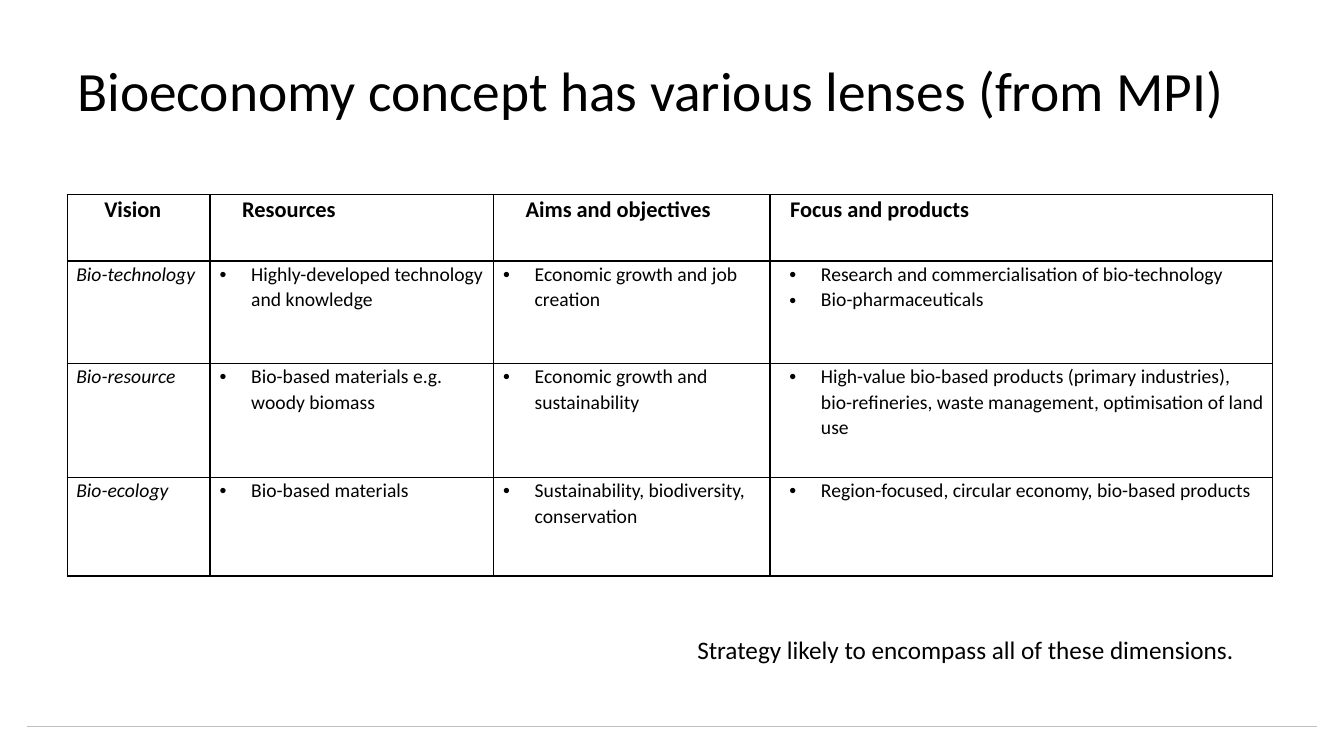
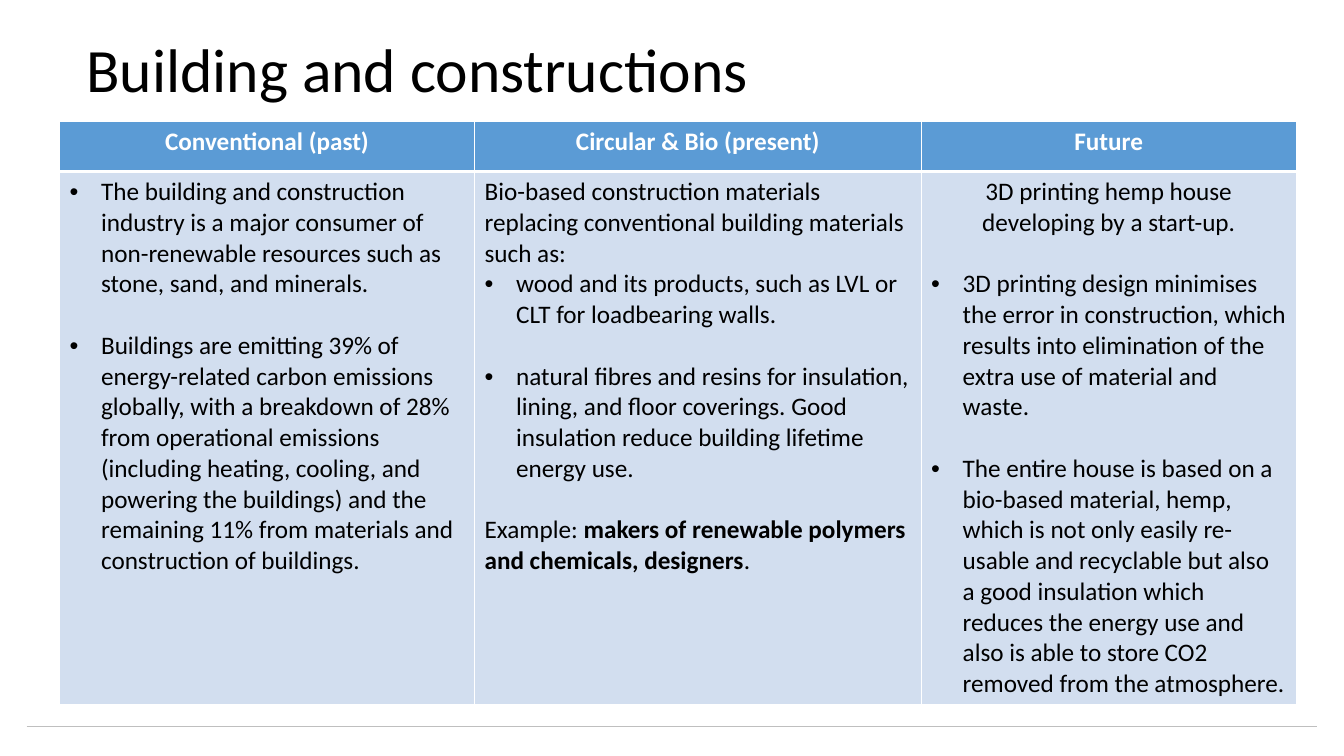
from lxml import etree
from pptx import Presentation
from pptx.dml.color import RGBColor
from pptx.enum.shapes import MSO_CONNECTOR
from pptx.enum.text import MSO_ANCHOR, PP_ALIGN
from pptx.oxml.ns import qn
from pptx.util import Pt

LEFT, CENTER = PP_ALIGN.LEFT, PP_ALIGN.CENTER
MIDDLE, TOP = MSO_ANCHOR.MIDDLE, MSO_ANCHOR.TOP
STRAIGHT = MSO_CONNECTOR.STRAIGHT

COLORS = {
    "text": "000000",
    "white": "FFFFFF",
    "footer_rule": "BFBFBF",
    "header": "5B9BD5",
    "body": "D2DEEF",
}
FONT = "Calibri"
HANG = 22.5
BLANK_LINE = Pt(22)

lens_text = {"size": 14, "spacing": 1.07}
lens_header = {"size": 16, "bold": True, "spacing": 1.07}
STYLES = {
    "title_long": {"size": 39.6, "spacing": 0.9},
    "title": {"size": 44, "spacing": 0.9},
    "plain": {},
    "plain_gap": {"before": BLANK_LINE},
    "centered": {"align": CENTER},
    "bullet": {"margin": HANG, "bullet": True},
    "bullet_gap": {"margin": HANG, "bullet": True, "before": BLANK_LINE},
    "era_header": {"align": CENTER, "bold": True, "color": "white"},
    "vision_header": {**lens_header, "margin": 21.5},
    "lens_header": {**lens_header, "margin": 18},
    "focus_header": {**lens_header, "margin": 9.5},
    "vision": {**lens_text, "margin": 1.5, "italic": True},
    "lens_bullet": {**lens_text, "margin": 24.5, "bullet": True},
    "focus_bullet": {**lens_text, "margin": 31.5, "bullet": True},
}


def write(frame, items):
    for number, (style_name, text) in enumerate(items):
        style = STYLES[style_name]
        paragraph = frame.add_paragraph() if number else frame.paragraphs[0]
        paragraph.alignment = style.get("align", LEFT)
        paragraph.line_spacing = style.get("spacing", 1.0)
        paragraph.space_before = style.get("before", Pt(0))
        properties = paragraph._p.get_or_add_pPr()
        properties.set("marL", str(Pt(style.get("margin", 0))))
        properties.set("indent", str(Pt(-HANG if "bullet" in style else 0)))
        if "bullet" in style:
            etree.SubElement(properties, qn("a:buFont"), typeface="Arial")
            etree.SubElement(properties, qn("a:buChar"), char="•")
        for part, words in enumerate(text.split("*")):
            run = paragraph.add_run()
            run.text = words
            font_values = {
                "name": FONT,
                "size": Pt(style.get("size", 18)),
                "bold": style.get("bold", part % 2 == 1),
                "italic": style.get("italic", False),
            }
            for key, value in font_values.items():
                setattr(run.font, key, value)
            run.font.color.rgb = RGBColor.from_string(COLORS[style.get("color", "text")])


def add_grid(slide, left, top, widths, heights, rows, insets, fills, color, header_rule):
    table = slide.shapes.add_table(
        len(heights), len(widths), Pt(left), Pt(top), Pt(sum(widths)), Pt(sum(heights))
    ).table
    table.first_row = table.horz_banding = False
    for column, width in zip(table.columns, widths):
        column.width = Pt(width)
    for row_number, (row, height, contents) in enumerate(zip(table.rows, heights, rows)):
        row.height = Pt(height)
        for cell, items in zip(row.cells, contents):
            cell_values = {
                "margin_left": Pt(insets[0]),
                "margin_right": Pt(insets[0]),
                "margin_top": Pt(insets[1]),
                "margin_bottom": Pt(insets[1]),
                "vertical_anchor": TOP,
            }
            for key, value in cell_values.items():
                setattr(cell, key, value)
            write(cell.text_frame, items)
            fill = fills[min(row_number, 1)]
            if fill:
                cell.fill.solid()
                cell.fill.fore_color.rgb = RGBColor.from_string(COLORS[fill])
            else:
                cell.fill.background()
            properties = cell._tc.get_or_add_tcPr()
            for position, side in enumerate("LRTB"):
                under_header = (row_number, side) in ((0, "B"), (1, "T"))
                weight = header_rule if under_header else 1
                border = etree.Element(qn("a:ln" + side), w=str(Pt(weight)))
                paint = etree.SubElement(border, qn("a:solidFill"))
                etree.SubElement(paint, qn("a:srgbClr"), val=COLORS[color])
                properties.insert(position, border)


prs = Presentation()
prs.slide_width, prs.slide_height = Pt(960), Pt(540)
layout = prs.slide_layouts[5]

titles = [
    ("title_long", "Bioeconomy concept has various lenses (from MPI)", 48, 21.5),
    ("title", "Building and constructions", 54.5, 7),
]
slides = []
for style_name, text, left, top in titles:
    slide = prs.slides.add_slide(layout)
    title = slide.shapes.title
    place = {"left": Pt(left), "top": Pt(top), "width": Pt(864), "height": Pt(90)}
    for key, value in place.items():
        setattr(title, key, value)
    title.text_frame.vertical_anchor = MIDDLE
    write(title.text_frame, [(style_name, text)])
    slides.append(slide)
lenses, building = slides

footer_rule = lenses.shapes.add_connector(STRAIGHT, Pt(19), Pt(519), Pt(941), Pt(519))
footer_rule.line.width = Pt(1)
footer_rule.line.color.rgb = RGBColor.from_string(COLORS["footer_rule"])
etree.SubElement(footer_rule._element.spPr, qn("a:effectLst"))
layout.shapes.element.append(footer_rule._element)

lens_rows = [[
    [("vision_header", "Vision")],
    [("lens_header", "Resources")],
    [("lens_header", "Aims and objectives")],
    [("focus_header", "Focus and products")],
]]
visions = [
    ("Bio-technology", "Highly-developed technology and knowledge",
     "Economic growth and job creation",
     ["Research and commercialisation of bio-technology", "Bio-pharmaceuticals"]),
    ("Bio-resource", "Bio-based materials e.g. woody biomass",
     "Economic growth and sustainability",
     ["High-value bio-based products (primary industries), bio-refineries, "
      "waste management, optimisation of land use"]),
    ("Bio-ecology", "Bio-based materials",
     "Sustainability, biodiversity, conservation",
     ["Region-focused, circular economy, bio-based products"]),
]
for vision, resources, aims, focus in visions:
    lens_rows.append([
        [("vision", vision)],
        [("lens_bullet", resources)],
        [("lens_bullet", aims)],
        [("focus_bullet", product) for product in focus],
    ])
add_grid(lenses, 48, 139, [102, 202.5, 197.5, 359], [47.5, 73, 81.5, 70.5],
         lens_rows, (5, 0), (None, None), "text", 1)

strategy = lenses.shapes.add_textbox(Pt(491), Pt(449.5), Pt(404), Pt(29))
strategy.text_frame.word_wrap = True
write(strategy.text_frame, [("plain", "Strategy likely to encompass all of these dimensions.")])

era_headers = ["Conventional (past)", "Circular & Bio (present)", "Future"]
past = [
    ("bullet", "The building and construction industry is a major consumer of "
               "non-renewable resources such as stone, sand, and minerals."),
    ("bullet_gap", "Buildings are emitting 39% of energy-related carbon emissions globally, "
                   "with a breakdown of 28% from operational emissions (including heating, "
                   "cooling, and powering the buildings) and the remaining 11% from "
                   "materials and construction of buildings."),
]
present = [
    ("plain", "Bio-based construction materials replacing conventional building "
              "materials such as:"),
    ("bullet", "wood and its products, such as LVL or CLT for loadbearing walls."),
    ("bullet_gap", "natural fibres and resins for insulation, lining, and floor coverings. "
                   "Good insulation reduce building lifetime energy use."),
    ("plain_gap", "Example: *makers of renewable polymers and chemicals, designers*."),
]
future = [
    ("centered", "3D printing hemp house developing by a start-up."),
    ("bullet_gap", "3D printing design minimises the error in construction, which results "
                   "into elimination of the extra use of material and waste."),
    ("bullet_gap", "The entire house is based on a bio-based material, hemp, which is not "
                   "only easily re-usable and recyclable but also a good insulation which "
                   "reduces the energy use and also is able to store CO2 removed from the "
                   "atmosphere."),
]
era_rows = [[[("era_header", era)] for era in era_headers], [past, present, future]]
add_grid(building, 42.5, 86.5, [296.5, 319, 268], [36, 376],
         era_rows, (7.2, 3.6), ("header", "body"), "white", 3)

prs.save("out.pptx")
